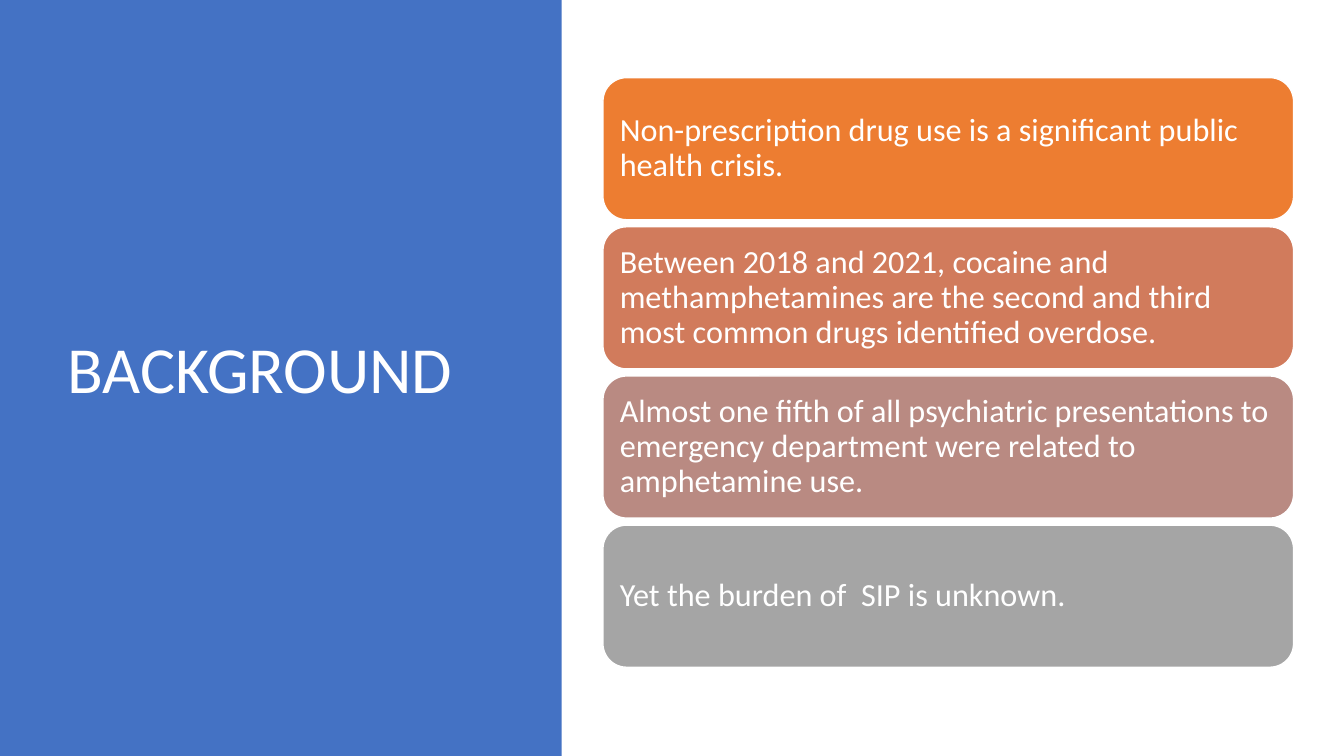
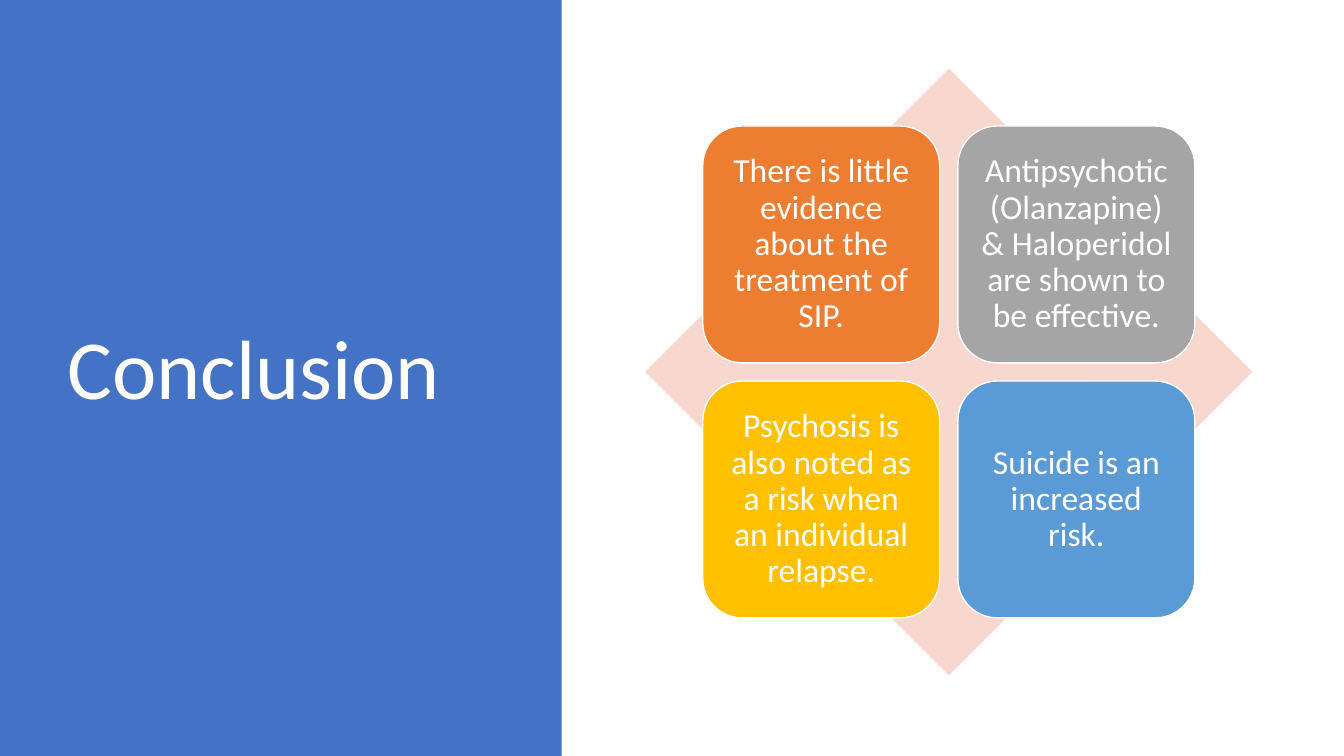
from pptx import Presentation
from pptx.dml.color import RGBColor
from pptx.enum.shapes import MSO_SHAPE
from pptx.enum.text import MSO_ANCHOR, MSO_AUTO_SIZE, PP_ALIGN
from pptx.util import Inches, Pt

WHITE = RGBColor(0xFF, 0xFF, 0xFF)
BLUE = RGBColor(0x44, 0x72, 0xC4)
ORANGE = RGBColor(0xED, 0x7D, 0x31)
TERRACOTTA = RGBColor(0xD1, 0x7B, 0x5C)
ROSE = RGBColor(0xB9, 0x8A, 0x82)
GRAY = RGBColor(0xA5, 0xA5, 0xA5)
GOLD = RGBColor(0xFF, 0xC0, 0x00)
SKY = RGBColor(0x5B, 0x9B, 0xD5)
BLUSH = RGBColor(0xF8, 0xD7, 0xCE)

FONT = "Calibri"
SLIDE_WIDTH, SLIDE_HEIGHT = 13.33, 7.5
BAND_WIDTH = 5.57
CONTENT_TOP, CONTENT_HEIGHT = 0.68, 6.02
TITLE_LEFT, TITLE_WIDTH = 0.57, 4.16

LIST_LEFT, LIST_TOP, LIST_WIDTH = 5.98, 0.77, 6.85
ROW_HEIGHT, ROW_STEP = 1.41, 1.48
DIAMOND_LEFT = 6.4
TILE_SIZE, TILE_STEP, TILE_INSET = 2.35, 2.53, 0.57

BACKGROUND_POINTS = [
    ("Non-prescription drug use is a significant public health crisis.", ORANGE),
    ("Between 2018 and 2021, cocaine and methamphetamines are the second and "
     "third most common drugs identified overdose.", TERRACOTTA),
    ("Almost one fifth of all psychiatric presentations to emergency "
     "department were related to amphetamine use.", ROSE),
    ("Yet the burden of  SIP is unknown.", GRAY),
]
CONCLUSION_POINTS = [
    ("There is little evidence about the treatment of SIP.", ORANGE),
    ("Antipsychotic (Olanzapine) & Haloperidol are shown to be effective.", GRAY),
    ("Psychosis is also noted as a risk when an individual relapse.", GOLD),
    ("Suicide is an increased risk.", SKY),
]


def write_text(box, text, size, alignment):
    frame = box.text_frame
    frame.text = text
    frame.word_wrap = True
    frame.auto_size = MSO_AUTO_SIZE.NONE
    frame.vertical_anchor = MSO_ANCHOR.MIDDLE
    para = frame.paragraphs[0]
    para.alignment = alignment
    para.line_spacing = 0.9
    para.space_before = Pt(0)
    for span in para.runs:
        span.font.name = FONT
        span.font.size = Pt(size)
        span.font.color.rgb = WHITE


def add_filled_shape(page, kind, left, top, width, height, fill):
    shape = page.shapes.add_shape(
        kind, Inches(left), Inches(top), Inches(width), Inches(height))
    shape.shadow.inherit = False
    shape.fill.solid()
    shape.fill.fore_color.rgb = fill
    shape.line.fill.background()
    return shape


def add_card(page, left, top, width, height, fill, text, size, alignment):
    card = add_filled_shape(
        page, MSO_SHAPE.ROUNDED_RECTANGLE, left, top, width, height, fill)
    card.line.color.rgb = WHITE
    card.line.width = Pt(1)
    frame = card.text_frame
    frame.margin_left = frame.margin_right = Inches(0.1)
    frame.margin_top = frame.margin_bottom = Inches(0.1)
    write_text(card, text, size, alignment)


def add_page(deck, heading, size):
    page = deck.slides.add_slide(deck.slide_layouts[5])
    title = page.shapes.title
    title.left, title.top = Inches(TITLE_LEFT), Inches(CONTENT_TOP)
    title.width, title.height = Inches(TITLE_WIDTH), Inches(CONTENT_HEIGHT)
    write_text(title, heading, size, PP_ALIGN.LEFT)
    band = add_filled_shape(
        page, MSO_SHAPE.RECTANGLE, 0, 0, BAND_WIDTH, SLIDE_HEIGHT, BLUE)
    title._element.addprevious(band._element)
    return page


def add_card_list(page, points):
    for row, (text, fill) in enumerate(points):
        add_card(page, LIST_LEFT, LIST_TOP + row * ROW_STEP,
                 LIST_WIDTH, ROW_HEIGHT, fill, text, 23, PP_ALIGN.LEFT)


def add_diamond_matrix(page, points):
    add_filled_shape(page, MSO_SHAPE.DIAMOND, DIAMOND_LEFT, CONTENT_TOP,
                     CONTENT_HEIGHT, CONTENT_HEIGHT, BLUSH)
    for index, (text, fill) in enumerate(points):
        row, column = divmod(index, 2)
        add_card(page, DIAMOND_LEFT + TILE_INSET + column * TILE_STEP,
                 CONTENT_TOP + TILE_INSET + row * TILE_STEP,
                 TILE_SIZE, TILE_SIZE, fill, text, 24, PP_ALIGN.CENTER)


def main():
    deck = Presentation()
    deck.slide_width = Inches(SLIDE_WIDTH)
    deck.slide_height = Inches(SLIDE_HEIGHT)
    add_card_list(add_page(deck, "BACKGROUND", 47), BACKGROUND_POINTS)
    add_diamond_matrix(add_page(deck, "Conclusion", 60), CONCLUSION_POINTS)
    deck.save("out.pptx")


if __name__ == "__main__":
    main()
